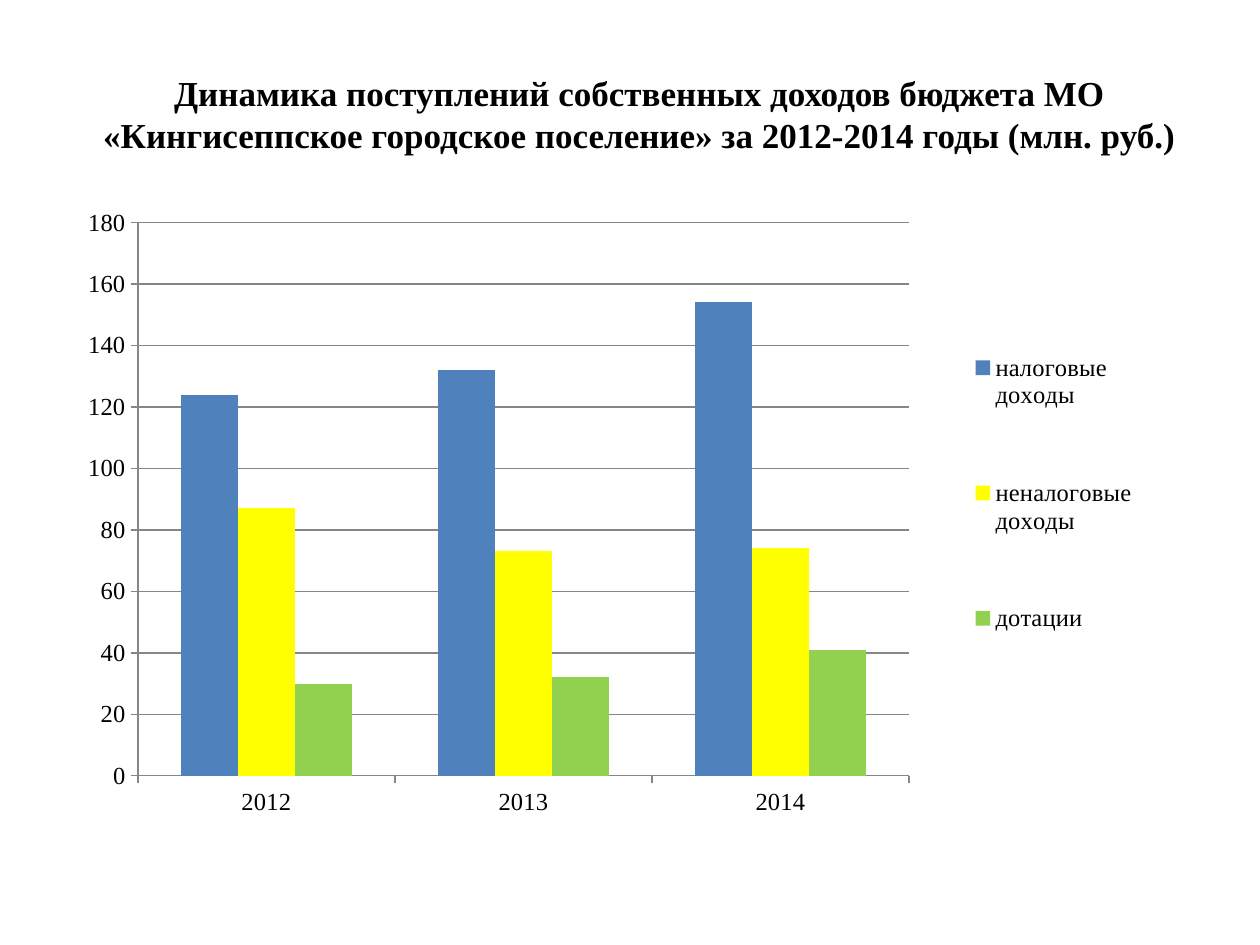
import pptx
import pptx.chart.data
import pptx.dml.color
import pptx.enum.chart
import pptx.enum.text
import pptx.oxml
import pptx.oxml.ns
import pptx.util
from pptx.util import Inches

HEADING = ("Динамика поступлений собственных доходов бюджета МО "
           "«Кингисеппское городское поселение» за 2012-2014 годы (млн. руб.)")
YEARS = ["2012", "2013", "2014"]
INCOME = {
    "налоговые доходы": (124, 132, 154),
    "неналоговые доходы": (87, 73, 74),
    "дотации": (30, 32, 41),
}
THEME = {
    "font": "Times New Roman",
    "text": "000000",
    "lines": "868686",
    "bars": ["4F81BD", "FFFF00", "92D050"],
    "heading_size": 20,
    "label_size": 14,
}
HEADING_BOX = (0.43, 0.52, 9.29, 0.77)
CHART_BOX = (0.67, 1.62, 8.5, 4.88)
PLOT_AREA = (0.05, 0.03, 0.72, 0.9)
LEGEND_AREA = (0.82, 0.13, 0.17, 0.68)


def rgb(value):
    return pptx.dml.color.RGBColor.from_string(value)


def apply(target, values):
    for name, value in values.items():
        setattr(target, name, value)


def style_font(font, size, bold=False):
    apply(font, {"name": THEME["font"], "size": pptx.util.Pt(size), "bold": bold})
    font.color.rgb = rgb(THEME["text"])


def style_line(line):
    line.color.rgb = rgb(THEME["lines"])
    line.width = pptx.util.Pt(0.75)


def set_layout(element, area, after=None, inner=False):
    for old in element.findall(pptx.oxml.ns.qn("c:layout")):
        element.remove(old)
    target = '<c:layoutTarget val="inner"/>' if inner else ""
    modes = "".join(f'<c:{axis}Mode val="edge"/>' for axis in "xy")
    sizes = "".join(f'<c:{side} val="{value}"/>' for side, value in zip("xywh", area))
    layout = pptx.oxml.parse_xml(
        f'<c:layout {pptx.oxml.ns.nsdecls("c")}><c:manualLayout>'
        f"{target}{modes}{sizes}</c:manualLayout></c:layout>")
    if after is None:
        element.insert(0, layout)
    else:
        element.find(pptx.oxml.ns.qn(after)).addnext(layout)


def add_heading(slide):
    heading = slide.shapes.title
    apply(heading, dict(zip(("left", "top", "width", "height"), map(Inches, HEADING_BOX))))
    frame = heading.text_frame
    apply(frame, {
        "text": HEADING,
        "word_wrap": True,
        "auto_size": pptx.enum.text.MSO_AUTO_SIZE.NONE,
        "vertical_anchor": pptx.enum.text.MSO_ANCHOR.TOP,
    })
    paragraph = frame.paragraphs[0]
    paragraph.alignment = pptx.enum.text.PP_ALIGN.CENTER
    style_font(paragraph.runs[0].font, THEME["heading_size"], True)


def add_income_chart(slide):
    income = pptx.chart.data.CategoryChartData()
    income.categories = YEARS
    for name, amounts in INCOME.items():
        income.add_series(name, amounts)
    chart = slide.shapes.add_chart(
        pptx.enum.chart.XL_CHART_TYPE.COLUMN_CLUSTERED,
        *map(Inches, CHART_BOX), income).chart
    apply(chart, {"has_title": False, "has_legend": True})
    style_font(chart.font, THEME["label_size"])

    bars = chart.plots[0]
    apply(bars, {"gap_width": 150, "overlap": 0, "vary_by_categories": False})
    for series, color in zip(bars.series, THEME["bars"]):
        series.format.fill.solid()
        series.format.fill.fore_color.rgb = rgb(color)

    for axis in (chart.category_axis, chart.value_axis):
        axis.major_tick_mark = pptx.enum.chart.XL_TICK_MARK.OUTSIDE
        style_font(axis.tick_labels.font, THEME["label_size"])
        style_line(axis.format.line)
    apply(chart.value_axis, {"minimum_scale": 0, "maximum_scale": 180,
                             "major_unit": 20, "has_major_gridlines": True})
    style_line(chart.value_axis.major_gridlines.format.line)

    legend = chart.legend
    apply(legend, {"position": pptx.enum.chart.XL_LEGEND_POSITION.RIGHT,
                   "include_in_layout": False})
    style_font(legend.font, THEME["label_size"])
    plot_area = chart.element.find(".//" + pptx.oxml.ns.qn("c:plotArea"))
    legend_area = chart.element.find(".//" + pptx.oxml.ns.qn("c:legend"))
    set_layout(plot_area, PLOT_AREA, inner=True)
    set_layout(legend_area, LEGEND_AREA, after="c:legendPos")


def main():
    deck = pptx.Presentation()
    apply(deck, {"slide_width": Inches(10), "slide_height": Inches(7.5)})
    slide = deck.slides.add_slide(deck.slide_layouts[5])
    add_heading(slide)
    add_income_chart(slide)
    deck.save("out.pptx")


if __name__ == "__main__":
    main()
